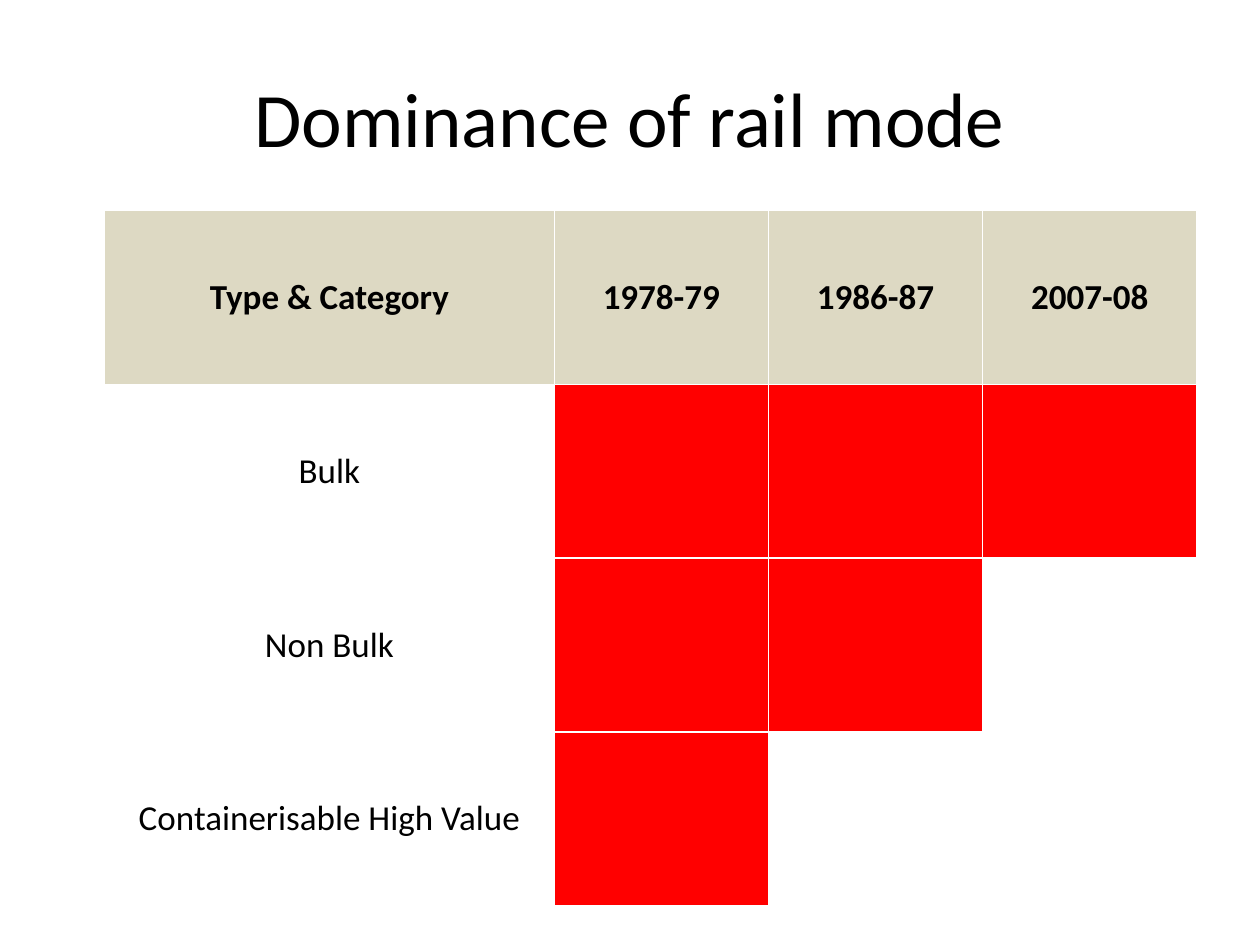
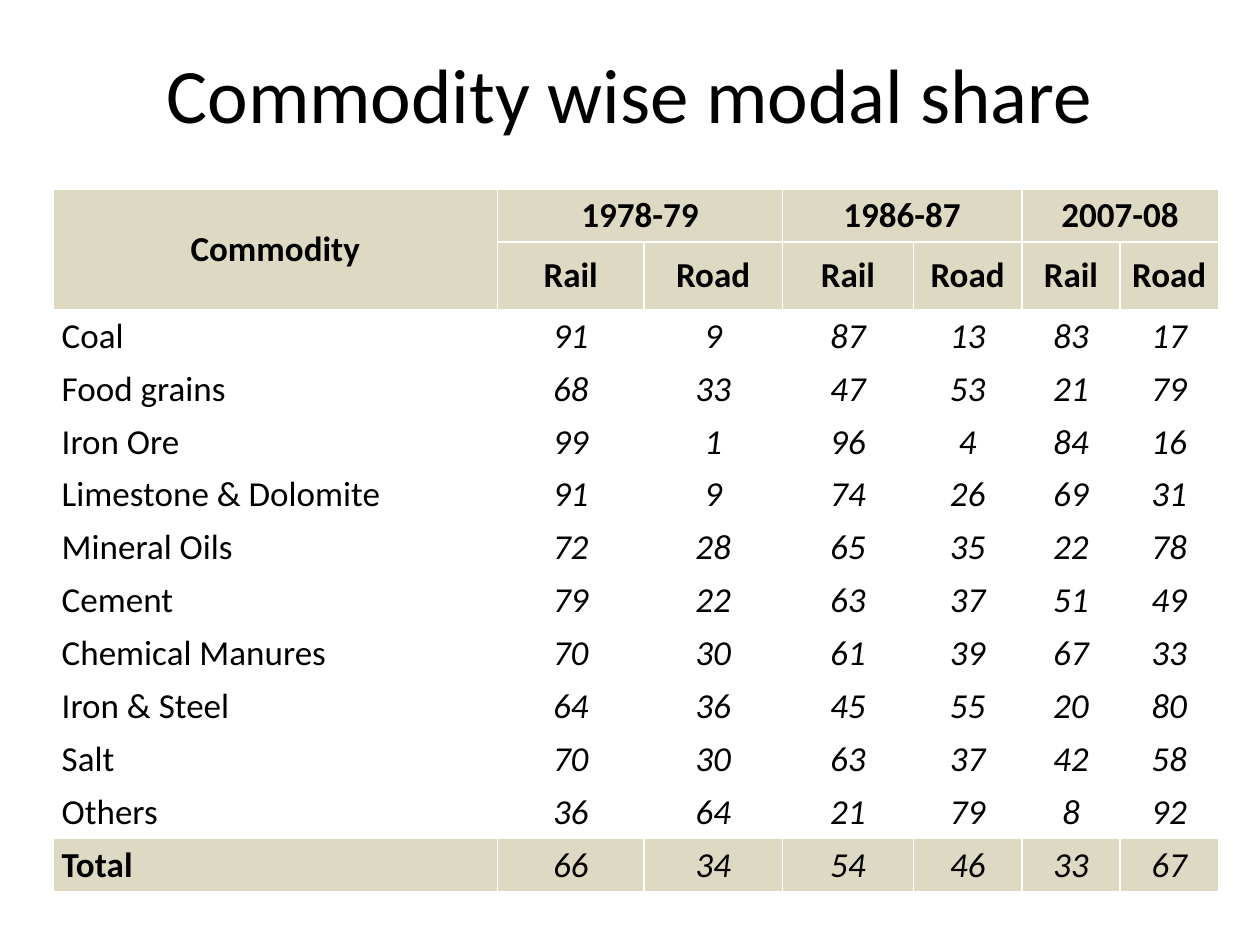
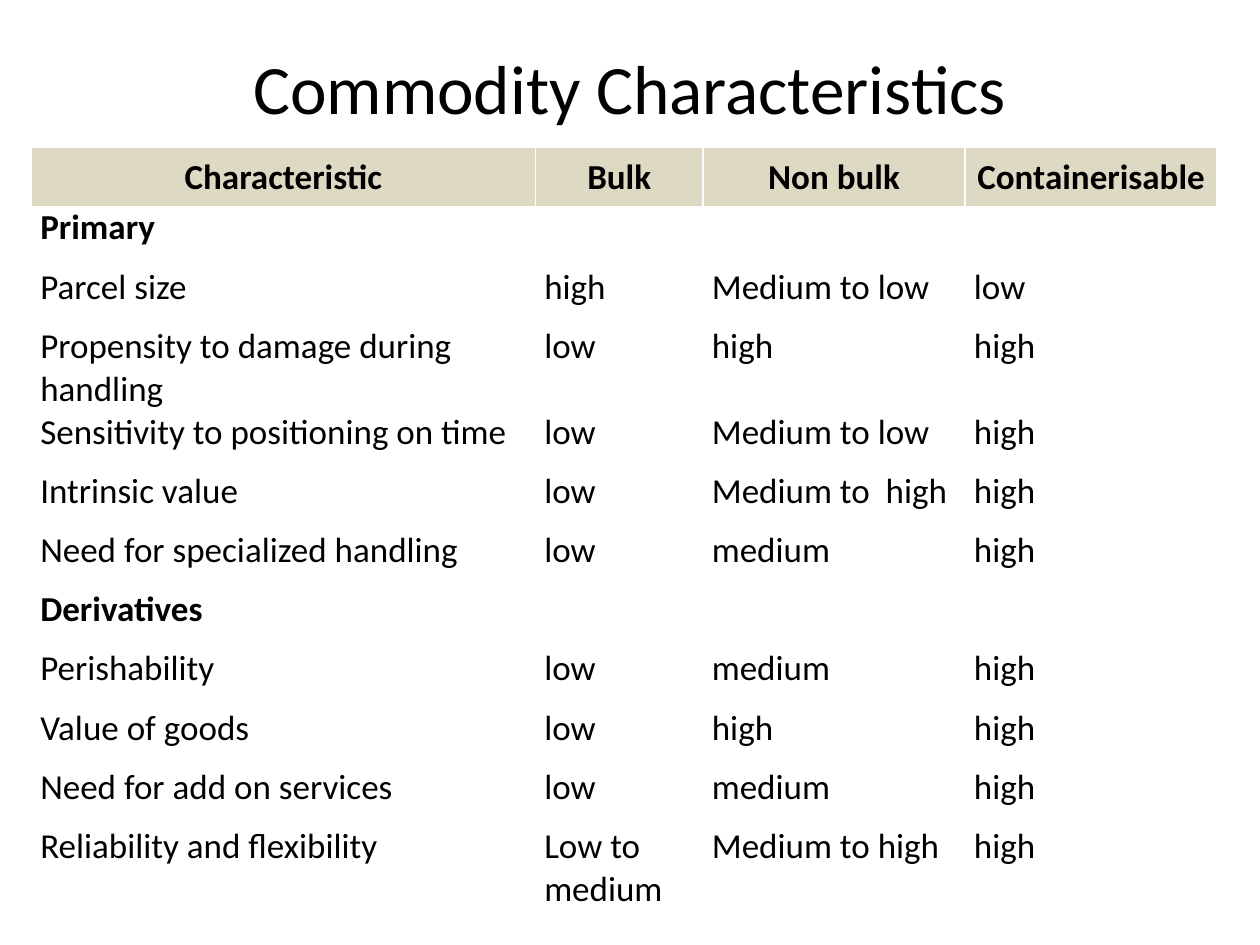
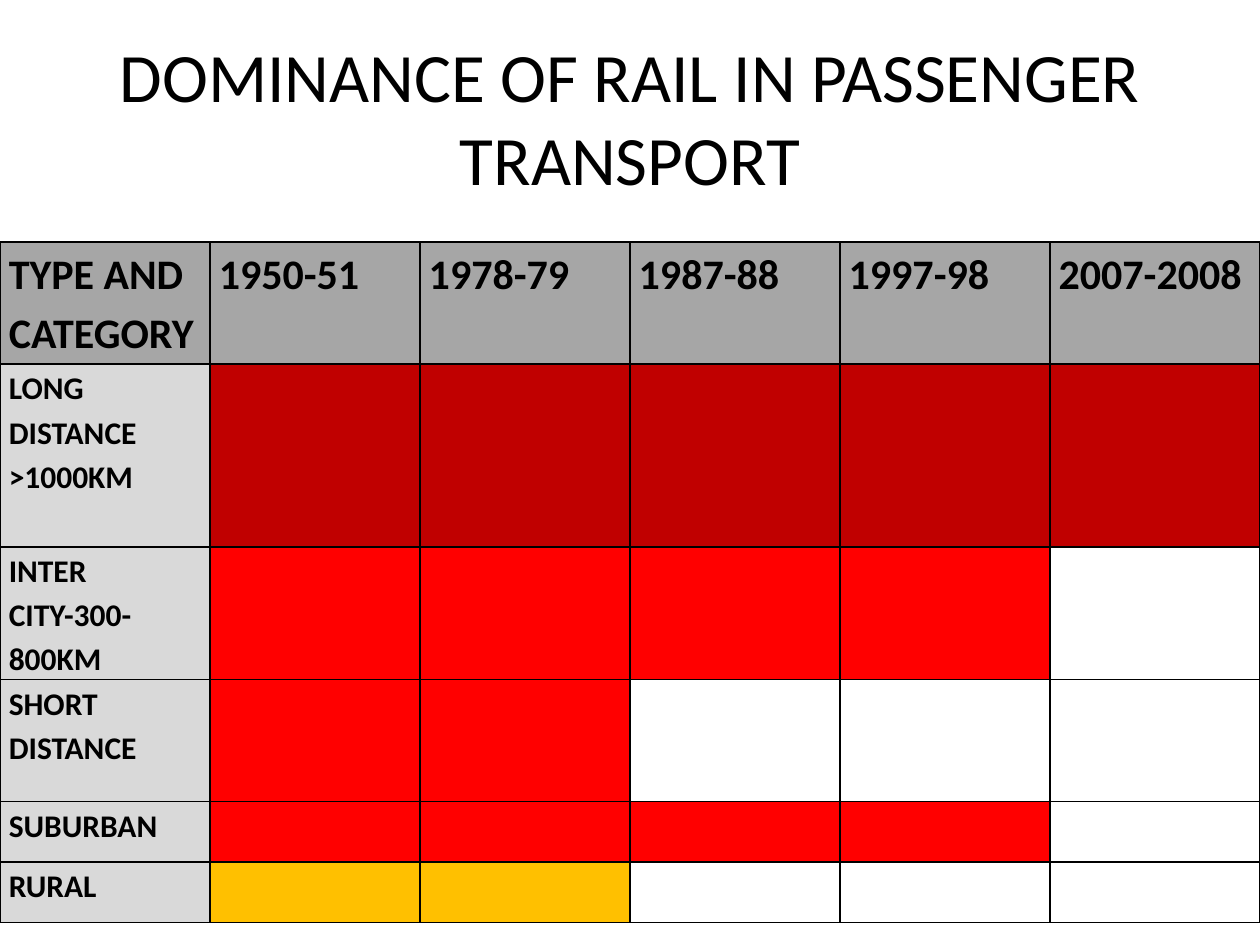
from lxml.etree import SubElement
from pptx import Presentation
from pptx.dml.color import RGBColor
from pptx.enum.text import MSO_ANCHOR, MSO_AUTO_SIZE, PP_ALIGN
from pptx.oxml.ns import qn
from pptx.util import Inches, Pt

FONT = "Calibri"
BLACK, WHITE, RED = "000000", "FFFFFF", "FF0000"
BEIGE, GREY, LIGHT_GREY = "DDD9C3", "A6A6A6", "D9D9D9"
DARK_RED, AMBER = "C00000", "FFC000"
CENTER, MIDDLE = PP_ALIGN.CENTER, MSO_ANCHOR.MIDDLE

deck = Presentation()
deck.slide_width, deck.slide_height = Inches(10), Inches(7.5)


def add_table_page(title, title_size, title_height, left, top, widths, heights, rows, border):
    """Add a page with a centred title and a bordered table; return the table."""
    page = deck.slides.add_slide(deck.slide_layouts[5])
    box = page.shapes.title
    box.left, box.top = Inches(0.5), Inches(0.3)
    box.width, box.height = Inches(9), Inches(title_height)
    frame = box.text_frame
    frame.text = title
    frame.auto_size, frame.vertical_anchor = MSO_AUTO_SIZE.NONE, MIDDLE
    frame.paragraphs[0].alignment = CENTER
    font = frame.paragraphs[0].runs[0].font
    font.name, font.size = FONT, Pt(title_size)
    font.color.rgb = RGBColor.from_string(BLACK)

    table = page.shapes.add_table(
        len(heights), len(widths), Inches(left), Inches(top),
        Inches(sum(widths)), Inches(sum(heights))).table
    table.first_row = table.horz_banding = False
    for column, width in zip(table.columns, widths):
        column.width = Inches(width)
    for row, height in zip(table.rows, heights):
        row.height = Inches(height)
    for row, texts in zip(table.rows, rows):
        for cell, text in zip(row.cells, texts):
            cell.text = text
    for cell in table.iter_cells():
        cell.margin_left = cell.margin_right = Inches(0.07)
        cell.margin_top = cell.margin_bottom = 0
        for side in ("a:lnL", "a:lnR", "a:lnT", "a:lnB"):
            line = SubElement(cell._tc.get_or_add_tcPr(), qn(side), w=str(Pt(1)))
            SubElement(SubElement(line, qn("a:solidFill")), qn("a:srgbClr"), val=border)
        cell.fill.background()
    return table


def style_cell(cell, fill=None, align=None, anchor=None, spacing=None, **font_format):
    """Set the fill, paragraph layout and font of one cell."""
    if fill:
        cell.fill.solid()
        cell.fill.fore_color.rgb = RGBColor.from_string(fill)
    if anchor is not None:
        cell.vertical_anchor = anchor
    values = {"name": FONT, "size": Pt(20), "bold": False, "italic": False} | font_format
    for para in cell.text_frame.paragraphs:
        para.alignment, para.line_spacing = align, spacing
        for span in para.runs:
            span.font.color.rgb = RGBColor.from_string(BLACK)
            for key, value in values.items():
                setattr(span.font, key, value)


# Page 1: dominance of rail in freight
modes = [["Type & Category", "1978-79", "1986-87", "2007-08"],
         ["Bulk"], ["Non Bulk"], ["Containerisable High Value"]]
table = add_table_page("Dominance of rail mode", 44, 1.25, 0.83, 1.67,
                       [3.57] + [1.7] * 3, [1.38] * 4, modes, WHITE)
rail_years = [0, 3, 2, 1]
for r, years in enumerate(rail_years):
    for c in range(4):
        fill = BEIGE if r == 0 else RED if 1 <= c <= years else None
        style_cell(table.cell(r, c), fill, CENTER, MIDDLE, bold=r == 0)

# Page 2: modal share of each commodity
shares = [
    ("Coal", 91, 9, 87, 13, 83, 17),
    ("Food grains", 68, 33, 47, 53, 21, 79),
    ("Iron Ore", 99, 1, 96, 4, 84, 16),
    ("Limestone & Dolomite", 91, 9, 74, 26, 69, 31),
    ("Mineral Oils", 72, 28, 65, 35, 22, 78),
    ("Cement", 79, 22, 63, 37, 51, 49),
    ("Chemical Manures", 70, 30, 61, 39, 67, 33),
    ("Iron & Steel", 64, 36, 45, 55, 20, 80),
    ("Salt", 70, 30, 63, 37, 42, 58),
    ("Others", 36, 64, 21, 79, 8, 92),
    ("Total", 66, 34, 54, 46, 33, 67),
]
share_rows = [["Commodity", "1978-79", "", "1986-87", "", "2007-08", ""],
              [""] + ["Rail", "Road"] * 3]
share_rows += [[str(value) for value in row] for row in shares]
table = add_table_page("Commodity wise modal share", 44, 0.87, 0.42, 1.5,
                       [3.53, 1.16, 1.1, 1.04, 0.86, 0.78, 0.78],
                       [0.42, 0.54] + [0.42] * 11, share_rows, WHITE)
table.cell(0, 0).merge(table.cell(1, 0))
for c in (1, 3, 5):
    table.cell(0, c).merge(table.cell(0, c + 1))
total_row = len(share_rows) - 1
for r in range(len(share_rows)):
    for c in range(7):
        header, label = r < 2, c == 0
        style_cell(table.cell(r, c), BEIGE if header or r == total_row else None,
                   CENTER if header or not label else PP_ALIGN.LEFT, MIDDLE,
                   bold=header or (label and r == total_row),
                   italic=not header and not label)

# Page 3: commodity characteristics
traits = [
    ["Characteristic", "Bulk", "Non bulk", "Containerisable"],
    ["Primary"],
    ["Parcel size", "high", "Medium to low", "low"],
    ["Propensity to damage during handling", "low", "high", "high"],
    ["Sensitivity to positioning on time", "low", "Medium to low", "high"],
    ["Intrinsic value", "low", "Medium to  high", "high"],
    ["Need for specialized handling", "low", "medium", "high"],
    ["Derivatives"],
    ["Perishability", "low", "medium", "high"],
    ["Value of goods", "low", "high", "high"],
    ["Need for add on services", "low", "medium", "high"],
    ["Reliability and flexibility", "Low to medium", "Medium to high", "high"],
]
table = add_table_page("Commodity Characteristics", 39.6, 0.78, 0.25, 1.17,
                       [4, 1.33, 2.08, 2], [0.47] * len(traits), traits, WHITE)
for r, texts in enumerate(traits):
    for c in range(4):
        if r == 0:
            style_cell(table.cell(r, c), BEIGE, CENTER, MIDDLE, bold=True)
        else:
            style_cell(table.cell(r, c), bold=len(texts) == 1)

# Page 4: dominance of rail in passenger transport
# Each category has its row height, bar colour and number of periods led by rail
categories = [
    ("LONG DISTANCE >1000KM", 1.45, DARK_RED, 5),
    ("INTER CITY-300-800KM", 0.97, RED, 4),
    ("SHORT DISTANCE", 0.97, RED, 2),
    ("SUBURBAN", 0.48, RED, 4),
    ("RURAL", 0.48, AMBER, 2),
]
periods = ["TYPE AND CATEGORY", "1950-51", "1978-79", "1987-88", "1997-98", "2007-2008"]
table = add_table_page("DOMINANCE OF RAIL IN PASSENGER TRANSPORT", 39.6, 1.25, 0, 1.92,
                       [10 / 6] * 6, [0.97] + [height for _, height, _, _ in categories],
                       [periods] + [[name] for name, _, _, _ in categories], BLACK)
for cell in table.rows[0].cells:
    style_cell(cell, GREY, spacing=1.15, size=Pt(24), bold=True)
for r, (_, _, bar_colour, count) in enumerate(categories, start=1):
    style_cell(table.cell(r, 0), LIGHT_GREY, spacing=1.15, size=Pt(18), bold=True)
    for c in range(1, count + 1):
        style_cell(table.cell(r, c), bar_colour)

deck.save("out.pptx")
